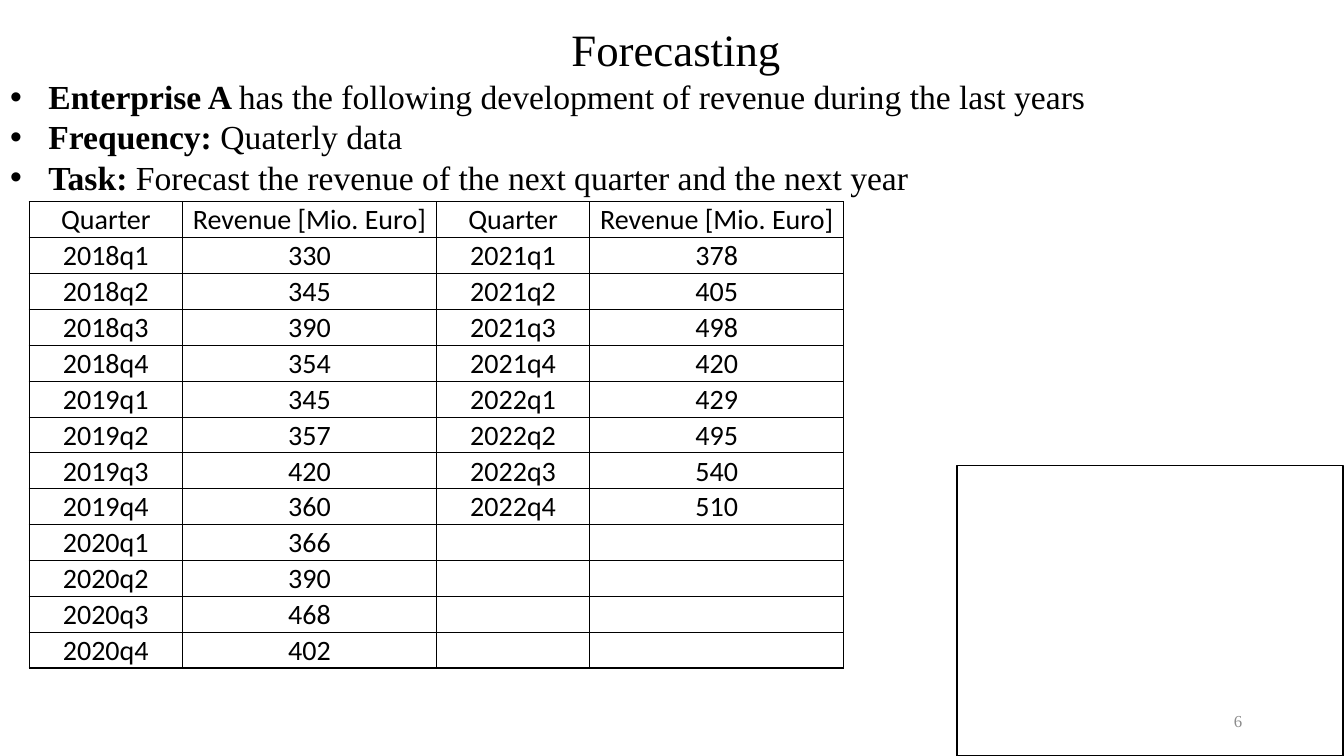
from lxml import etree
from pptx import Presentation
from pptx.dml.color import RGBColor
from pptx.enum import shapes, text
from pptx.oxml.ns import qn
from pptx.util import Inches, Pt

BLACK = RGBColor(0x00, 0x00, 0x00)
GRAY = RGBColor(0x8C, 0x8C, 0x8C)
SERIF, SANS = "Times New Roman", "Calibri"
THIN, THICK = Pt(0.5), Pt(1)

BULLETS = [
    ("Enterprise A ", "has the following development of revenue during the last years"),
    ("Frequency:", " Quaterly data"),
    ("Task:", " Forecast the revenue of the next quarter and the next year"),
]
HEADERS = ("Quarter", "Revenue [Mio. Euro]")
FIRST_YEAR = 2018
REVENUES = [330, 345, 390, 354, 345, 357, 420, 360, 366, 390,
            468, 402, 378, 405, 498, 420, 429, 495, 540, 510]
DATA_ROWS = 12


def place(shape, left, top, width, height):
    shape.left, shape.top = Inches(left), Inches(top)
    shape.width, shape.height = Inches(width), Inches(height)


def style(para, size, name, color=BLACK, align=None):
    para.font.size, para.font.name = Pt(size), name
    para.font.color.rgb = color
    para.alignment = align


def add_title(page, *box):
    title = page.shapes.title
    place(title, *box)
    frame = title.text_frame
    frame.text = "Forecasting"
    frame.auto_size = text.MSO_AUTO_SIZE.NONE
    frame.vertical_anchor = text.MSO_ANCHOR.MIDDLE
    style(frame.paragraphs[0], 32, SERIF, align=text.PP_ALIGN.CENTER)


def add_bullets(page, *box):
    body = page.placeholders[1]
    place(body, *box)
    frame = body.text_frame
    frame.auto_size = text.MSO_AUTO_SIZE.NONE
    frame.vertical_anchor = text.MSO_ANCHOR.TOP
    for index, (lead, rest) in enumerate(BULLETS):
        para = frame.paragraphs[0] if index == 0 else frame.add_paragraph()
        style(para, 24, SERIF)
        para.space_before = Pt(0)
        para.line_spacing = Pt(28.6)
        for words, bold in ((lead, True), (rest, False)):
            span = para.add_run()
            span.text, span.font.bold = words, bold
        # Hanging bullet
        props = para._p.get_or_add_pPr()
        props.set("marL", str(Inches(0.38)))
        props.set("indent", str(-Inches(0.38)))


def set_borders(cell, **widths):
    props = cell._tc.get_or_add_tcPr()
    for side in ("L", "R", "T", "B"):
        line = etree.SubElement(props, qn(f"a:ln{side}"), w=str(widths[side]))
        fill = etree.SubElement(line, qn("a:solidFill"))
        etree.SubElement(fill, qn("a:srgbClr"), val=str(BLACK))


def cell_words(row, col):
    """Header or data; each pair of columns continues the series."""
    half, is_revenue = divmod(col, 2)
    if row == 0:
        return HEADERS[is_revenue]
    index = half * DATA_ROWS + row - 1
    if index >= len(REVENUES):
        return ""
    year, quarter = divmod(index, 4)
    return str(REVENUES[index]) if is_revenue else f"{FIRST_YEAR + year}q{quarter + 1}"


def add_revenue_table(page, left, top, width, height):
    rows, cols = DATA_ROWS + 1, 4
    table = page.shapes.add_table(rows, cols, Inches(left), Inches(top),
                                  Inches(width), Inches(height)).table
    table.first_row = table.horz_banding = False
    for col, column in enumerate(table.columns):
        column.width = Inches(2.52 if col % 2 else 1.52)
    for row in range(rows):
        table.rows[row].height = Inches(height / rows)
        for col in range(cols):
            cell = table.cell(row, col)
            cell.margin_left = cell.margin_right = cell.margin_top = Inches(0.01)
            cell.margin_bottom = 0
            cell.vertical_anchor = text.MSO_ANCHOR.BOTTOM
            # Thick frame around each pair of columns
            set_borders(cell,
                        L=THIN if col % 2 else THICK,
                        R=THICK if col % 2 else THIN,
                        T=THICK if row == 0 else THIN,
                        B=THICK if row == rows - 1 else THIN)
            cell.fill.background()
            cell.text = cell_words(row, col)
            style(cell.text_frame.paragraphs[0], 20, SANS, align=text.PP_ALIGN.CENTER)


def add_empty_frame(page, *box):
    frame = page.shapes.add_shape(shapes.MSO_SHAPE.RECTANGLE, *map(Inches, box))
    frame.shadow.inherit = False
    frame.fill.background()
    frame.line.color.rgb = BLACK
    frame.line.width = Pt(1)


def add_page_number(page, *box):
    label = page.shapes.add_textbox(*map(Inches, box))
    frame = label.text_frame
    frame.word_wrap = True
    frame.vertical_anchor = text.MSO_ANCHOR.MIDDLE
    frame.text = "6"
    style(frame.paragraphs[0], 12, SERIF, GRAY, text.PP_ALIGN.RIGHT)


def main():
    deck = Presentation()
    deck.slide_width, deck.slide_height = Inches(13.33), Inches(7.5)
    page = deck.slides.add_slide(deck.slide_layouts[1])
    add_page_number(page, 9.42, 6.95, 3, 0.4)
    add_title(page, 1.86, 0.13, 9.69, 0.71)
    add_bullets(page, 0, 0.71, 13.33, 0.96)
    add_revenue_table(page, 0.29, 2, 8.08, 4.63)
    add_empty_frame(page, 9.49, 4.62, 3.83, 2.88)
    deck.save("out.pptx")


if __name__ == "__main__":
    main()
